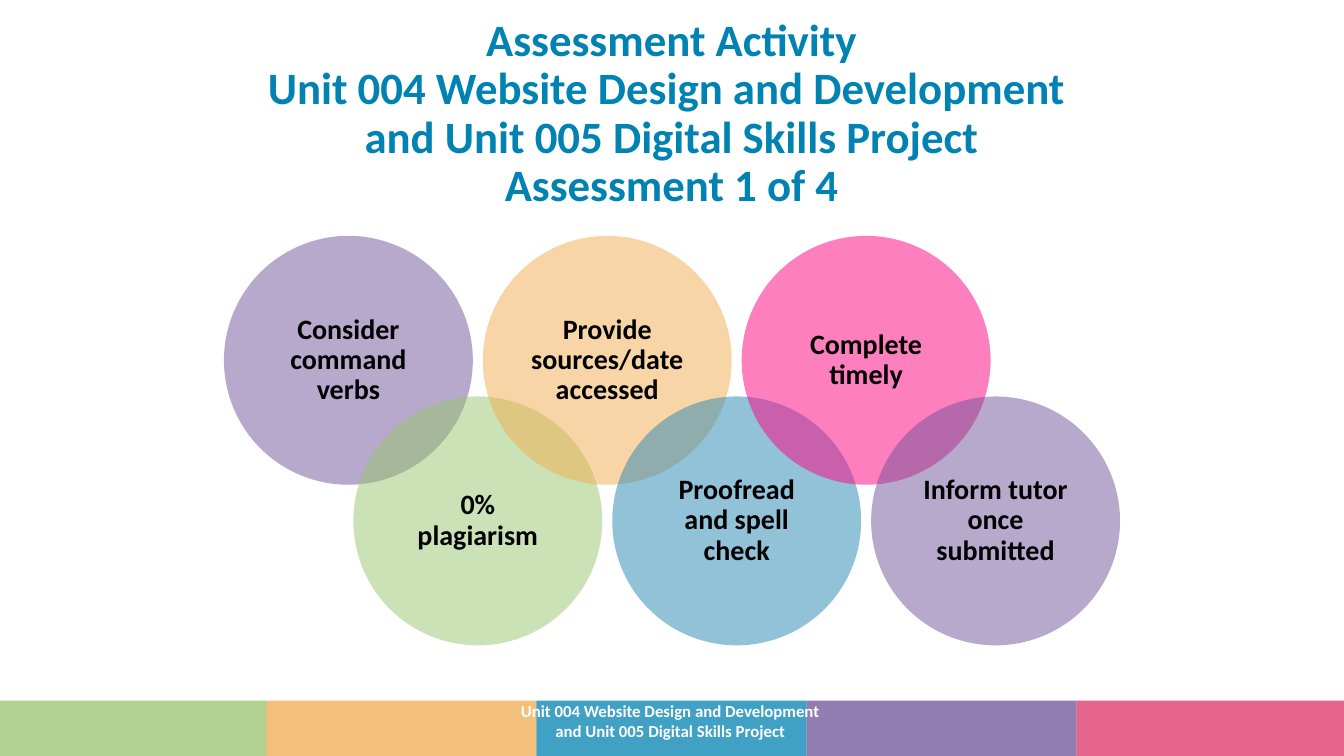
import pptx
import pptx.util
import pptx.dml.color
import pptx.enum.shapes
import pptx.enum.text
import lxml.etree

Pt = pptx.util.Pt
SHAPE = pptx.enum.shapes.MSO_SHAPE
THEME = {
    "font": "Calibri", "title": "0082B2", "circle_text": "000000", "footer": "FFFFFF",
    "title_size": 32, "circle_size": 20, "footer_size": 12,
    "bands": ["96C36C", "F0AB4F", "0082B2", "6B5397", "DF3266"],
    "circles": ["6E559A", "97C66C", "F1AD4F", "2786B3", "FE007F", "6E559A"],
}


def add_tinted(s, kind, left, top, width, height, color, opacity):
    sp = s.shapes.add_shape(kind, Pt(left), Pt(top), Pt(width), Pt(height))
    sp.shadow.inherit = False
    sp.line.fill.background()
    sp.fill.solid()
    sp.fill.fore_color.rgb = pptx.dml.color.RGBColor.from_string(color)
    clr = sp.fill._xPr.find(".//" + pptx.oxml.ns.qn("a:srgbClr"))
    lxml.etree.SubElement(clr, pptx.oxml.ns.qn("a:alpha")).set("val", str(opacity * 1000))
    return sp


def set_text(sp, text, size, color, spacing):
    tf = sp.text_frame
    tf.text = text
    tf.word_wrap = True
    tf.auto_size = pptx.enum.text.MSO_AUTO_SIZE.NONE
    tf.vertical_anchor = pptx.enum.text.MSO_ANCHOR.MIDDLE
    for p in tf.paragraphs:
        p.alignment = pptx.enum.text.PP_ALIGN.CENTER
        p.line_spacing = spacing
        for r in p.runs:
            r.font.name = THEME["font"]
            r.font.size = Pt(size)
            r.font.bold = True
            r.font.color.rgb = pptx.dml.color.RGBColor.from_string(color)


prs = pptx.Presentation()
prs.slide_width, prs.slide_height = Pt(960), Pt(540)
s = prs.slides.add_slide(prs.slide_layouts[5])

# Colour bands along the bottom
for i, color in enumerate(THEME["bands"]):
    add_tinted(s, SHAPE.RECTANGLE, -2.9 + i * 193, 500.4, 193, 40.3, color, 75)

# Title
title = s.shapes.title
title.left, title.top, title.width, title.height = Pt(4.3), Pt(11.5), Pt(951), Pt(140.4)
set_text(title, "Assessment Activity\nUnit 004 Website Design and Development \n"
         "and Unit 005 Digital Skills Project\nAssessment 1 of 4",
         THEME["title_size"], THEME["title"], 0.9)

# Overlapping circles, alternating between two rows
tips = ["Consider command verbs", "0% plagiarism", "Provide sources/date accessed",
        "Proofread and spell check", "Complete timely", "Inform tutor once submitted"]
for i, (tip, color) in enumerate(zip(tips, THEME["circles"])):
    sp = add_tinted(s, SHAPE.OVAL, 160 + i * 92.45, 168.5 + i % 2 * 114.7,
                    177.8, 177.8, color, 50)
    set_text(sp, tip, THEME["circle_size"], THEME["circle_text"], 0.9)
    tf = sp.text_frame
    tf.margin_left = tf.margin_right = tf.margin_top = tf.margin_bottom = Pt(5.8)

# Footer
footer = s.shapes.add_textbox(Pt(318.2), Pt(500.4), Pt(324), Pt(28.8))
set_text(footer, "Unit 004 Website Design and Development \nand Unit 005 Digital Skills Project ",
         THEME["footer_size"], THEME["footer"], 1.0)

prs.save("out.pptx")
